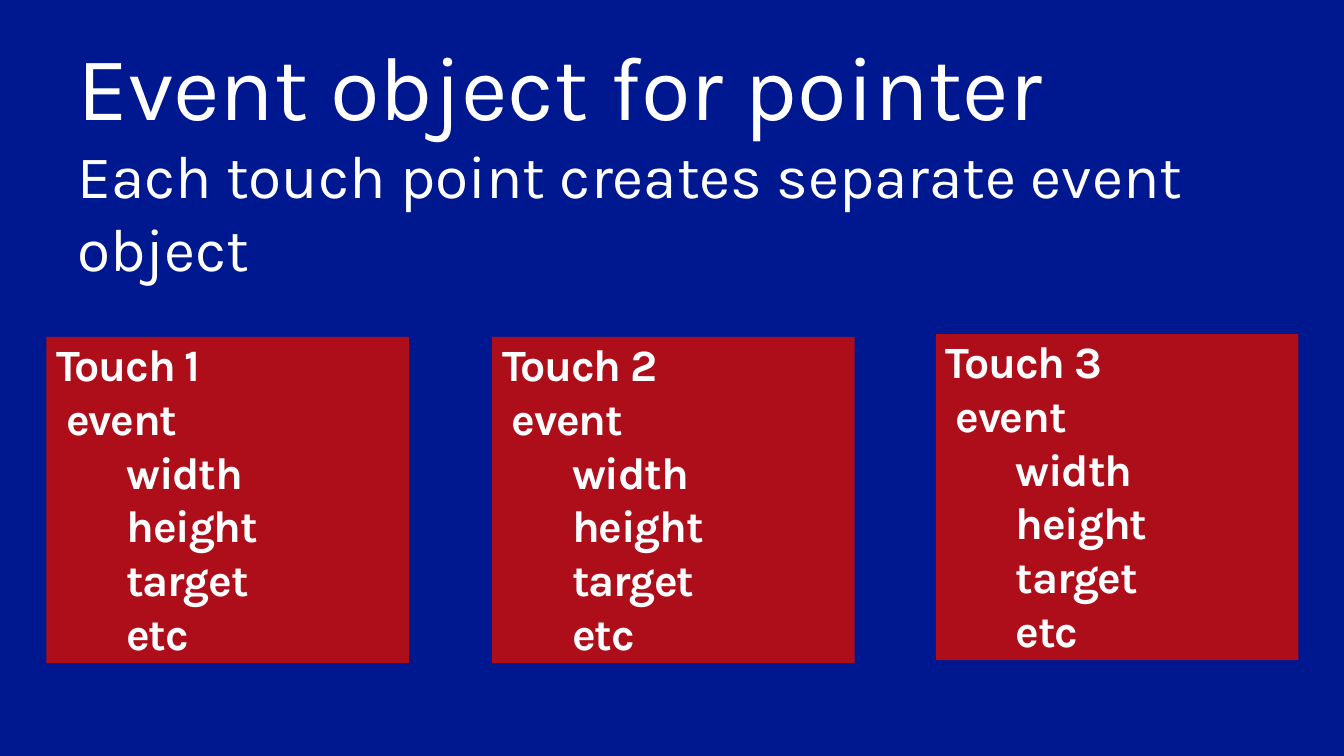
from pptx import Presentation
from pptx.dml.color import RGBColor
from pptx.enum.shapes import MSO_SHAPE
from pptx.enum.text import MSO_ANCHOR, PP_ALIGN
from pptx.util import Pt

RECTANGLE = MSO_SHAPE.RECTANGLE
TOP = MSO_ANCHOR.TOP
LEFT = PP_ALIGN.LEFT

COLORS = {"background": "00188F", "card": "AE0D1A", "text": "FFFFFF"}
FONT = "Karla"

HEADING = [("Event object for pointer", 66),
           ("Each touch point creates separate event object", 44)]
CARD_SIZE = (264.2, 237.6)
CARD_POSITIONS = [(33.8, 245.5), (358.6, 245.5), (681.8, 243.4)]
EVENT_FIELDS = ["width", "height", "target", "etc"]


class SlideBuilder:
    """Draws styled elements on the current slide."""

    def __init__(self, presentation):
        self.slide = presentation.slides.add_slide(presentation.slide_layouts[6])
        self.paint(self.slide.background.fill, "background")

    def paint(self, fill, color):
        fill.solid()
        fill.fore_color.rgb = RGBColor.from_string(COLORS[color])

    def prepare_frame(self, shape, side_margin=0, end_margin=0):
        frame = shape.text_frame
        frame.word_wrap = True
        frame.vertical_anchor = TOP
        frame.margin_left = frame.margin_right = Pt(side_margin)
        frame.margin_top = frame.margin_bottom = Pt(end_margin)
        return frame

    def write_line(self, frame, index, text, size, bold=False, indent=0, spacing=0):
        paragraph = frame.add_paragraph() if index else frame.paragraphs[0]
        paragraph.alignment = LEFT
        run = paragraph.add_run()
        run.text = text
        paragraph.font.name = FONT
        paragraph.font.size = Pt(size)
        paragraph.font.bold = bold
        paragraph.font.color.rgb = RGBColor.from_string(COLORS["text"])
        if indent:
            paragraph._p.get_or_add_pPr().set("marL", str(Pt(indent)))
        if spacing:
            run._r.get_or_add_rPr().set("spc", str(round(spacing * 100)))

    def heading(self, left, top, width, height, lines):
        shape = self.slide.shapes.add_textbox(Pt(left), Pt(top), Pt(width), Pt(height))
        frame = self.prepare_frame(shape, 14.4, 3.6)
        for index, (text, size) in enumerate(lines):
            self.write_line(frame, index, text, size)

    def card(self, left, top, width, height, lines):
        shape = self.slide.shapes.add_shape(
            RECTANGLE, Pt(left), Pt(top), Pt(width), Pt(height))
        shape.shadow.inherit = False
        shape.line.fill.background()
        self.paint(shape.fill, "card")
        frame = self.prepare_frame(shape)
        for index, (text, indent) in enumerate(lines):
            self.write_line(frame, index, text, 32.6, True, indent, -0.9)


def main():
    presentation = Presentation()
    presentation.slide_width = Pt(979.2)
    presentation.slide_height = Pt(550.8)
    builder = SlideBuilder(presentation)
    builder.heading(41.8, 18, 895.7, 71.3, HEADING)
    fields = [(field, 58.3) for field in EVENT_FIELDS]
    for number, position in enumerate(CARD_POSITIONS, start=1):
        lines = [(f"Touch {number}", 7.2), ("event", 14.4), *fields]
        builder.card(*position, *CARD_SIZE, lines)
    presentation.save("out.pptx")


if __name__ == "__main__":
    main()
